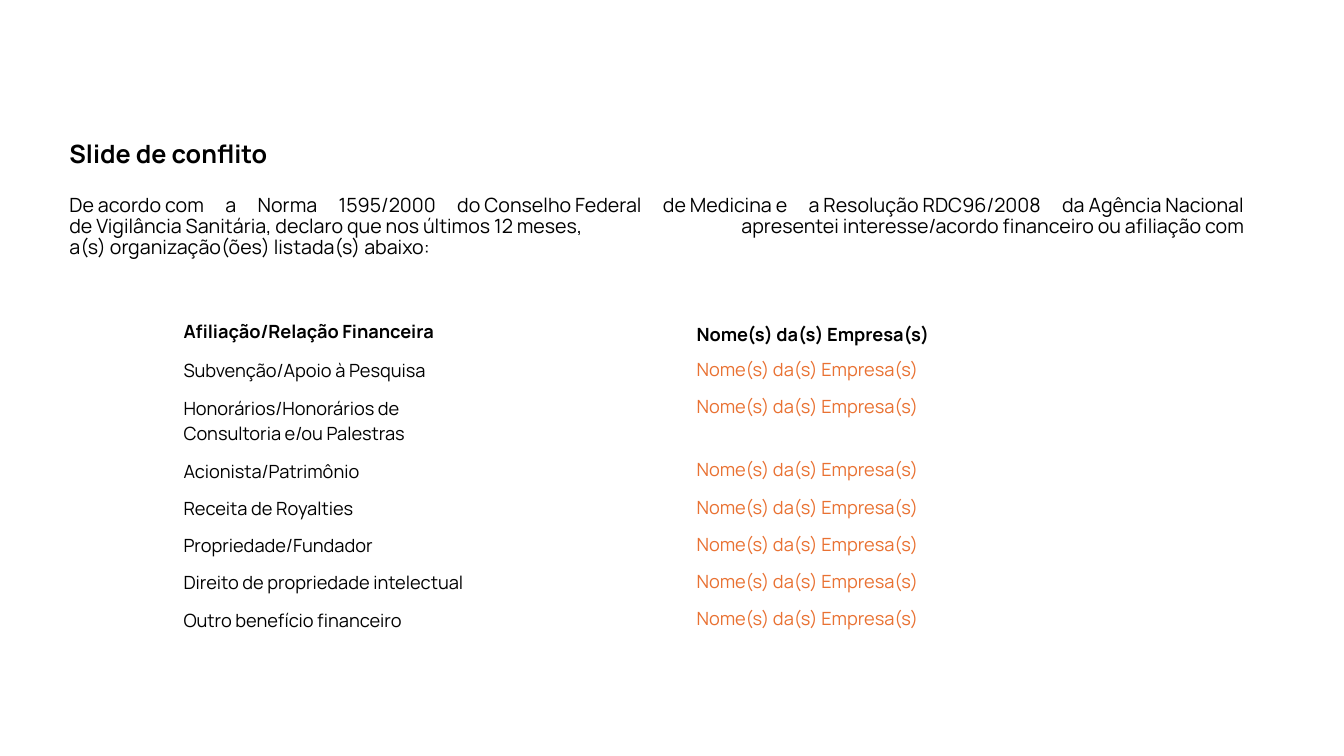
import pptx
import pptx.dml.color
import pptx.enum.text
import pptx.util
from pptx.util import Inches

FONT = "Manrope"
COLORS = {"text": "000000", "company": "E97132"}
ANCHOR = pptx.enum.text.MSO_ANCHOR
ALIGN = pptx.enum.text.PP_ALIGN

# Each phrase stays on one line; lines break only between phrases.
DECLARATION = [
    "De acordo com", "a", "Norma", "1595/2000", "do Conselho Federal",
    "de Medicina e", "a Resolução RDC96/2008", "da Agência Nacional",
    "de Vigilância Sanitária, declaro que nos últimos 12 meses,",
    "apresentei interesse/acordo financeiro ou afiliação com",
    "a(s) organização(ões) listada(s) abaixo:",
]
COMPANY = "Nome(s) da(s) Empresa(s)"
RELATIONS = [
    "Subvenção/Apoio à Pesquisa",
    "Honorários/Honorários de\nConsultoria e/ou Palestras",
    "Acionista/Patrimônio",
    "Receita de Royalties",
    "Propriedade/Fundador",
    "Direito de propriedade intelectual",
    "Outro benefício financeiro",
]


def join_phrases(phrases):
    """Join phrases with spaces, using non-breaking spaces inside each one."""
    return " ".join(phrase.replace(" ", chr(160)) for phrase in phrases)


def write_text(frame, text, size, color="text", bold=False):
    frame.text = text
    for paragraph in frame.paragraphs:
        font = paragraph.font
        font.name = FONT
        font.size = pptx.util.Pt(size)
        font.bold = bold
        font.color.rgb = pptx.dml.color.RGBColor.from_string(COLORS[color])


def add_text(slide, left, top, width, height, text, size, bold=False, wrap=True):
    box = slide.shapes.add_textbox(
        Inches(left), Inches(top), Inches(width), Inches(height))
    frame = box.text_frame
    frame.word_wrap = wrap
    frame.auto_size = pptx.enum.text.MSO_AUTO_SIZE.SHAPE_TO_FIT_TEXT
    write_text(frame, text, size, bold=bold)
    return frame.paragraphs[0]


def fill_cell(cell, text, anchor, color="text", bold=False):
    cell.fill.background()
    cell.vertical_anchor = anchor
    write_text(cell.text_frame, text, 13, color, bold)


def add_relations_table(slide):
    table = slide.shapes.add_table(
        len(RELATIONS) + 1, 2,
        Inches(1.72), Inches(3.12), Inches(10.11), Inches(3.22)).table
    table.first_row = False
    table.horz_banding = False
    for column, width in zip(table.columns, (5.09, 5.02)):
        column.width = Inches(width)

    table.rows[0].height = Inches(0.37)
    fill_cell(table.cell(0, 0), "Afiliação/Relação Financeira", ANCHOR.TOP, bold=True)
    fill_cell(table.cell(0, 1), COMPANY, ANCHOR.BOTTOM, bold=True)
    for row, relation in enumerate(RELATIONS, start=1):
        table.rows[row].height = Inches(0.63 if "\n" in relation else 0.37)
        fill_cell(table.cell(row, 0), relation, ANCHOR.MIDDLE)
        fill_cell(table.cell(row, 1), COMPANY, ANCHOR.TOP, "company")


def main():
    presentation = pptx.Presentation()
    presentation.slide_width = Inches(13.33)
    presentation.slide_height = Inches(7.5)
    slide = presentation.slides.add_slide(presentation.slide_layouts[6])

    declaration = add_text(
        slide, 0.59, 1.9, 11.86, 1.04, join_phrases(DECLARATION), 14)
    declaration.alignment = ALIGN.JUSTIFY
    declaration.line_spacing = 0.88
    add_text(slide, 0.59, 1.32, 2.26, 0.4, "Slide de conflito", 18,
             bold=True, wrap=False)
    add_relations_table(slide)
    presentation.save("out.pptx")


if __name__ == "__main__":
    main()
